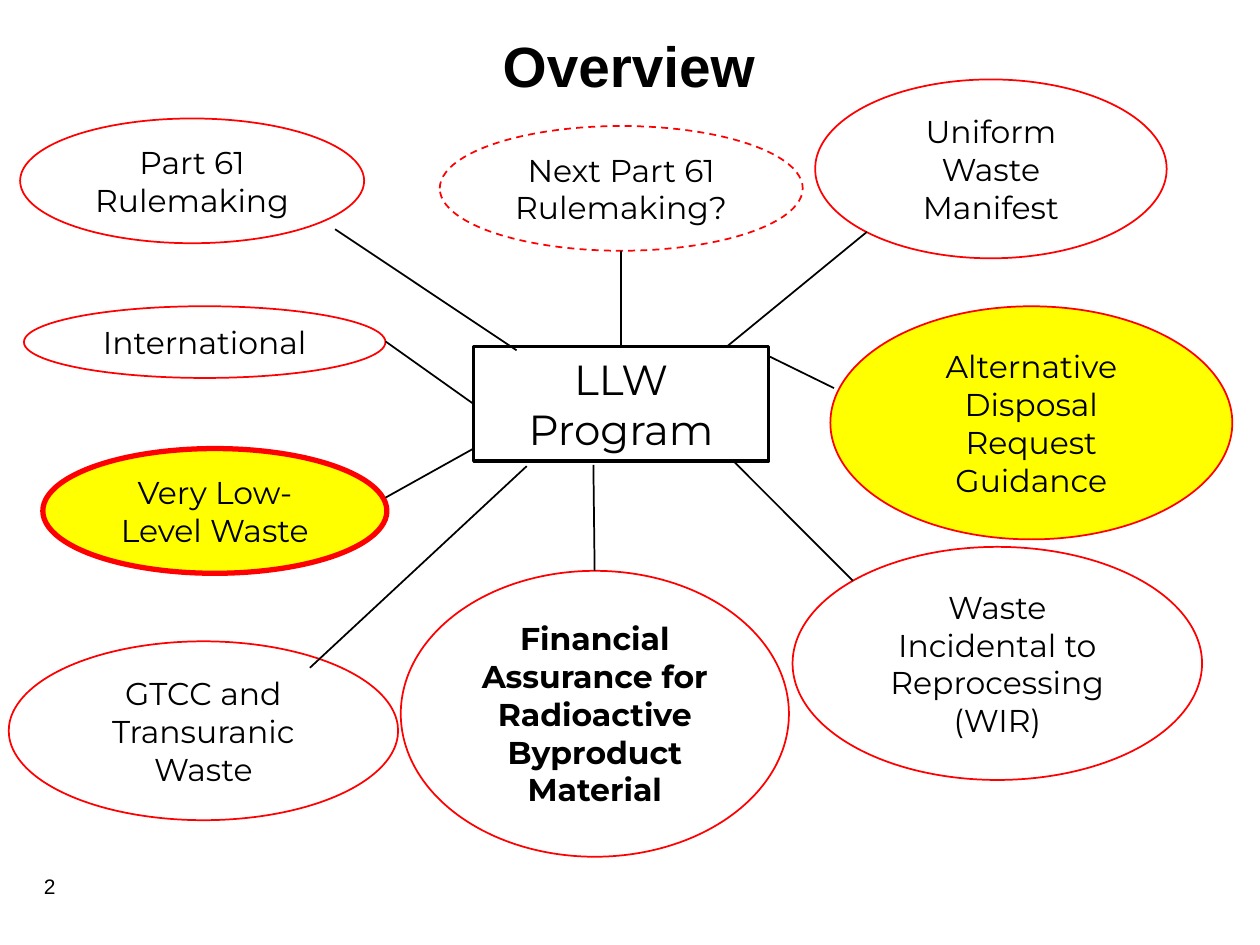
"""Build the LLW program overview slide: a central box linked to its topics."""
import pptx
import pptx.dml.color
import pptx.enum.dml
import pptx.enum.shapes
import pptx.enum.text
import pptx.oxml
import pptx.util
from lxml import etree

Pt = pptx.util.Pt
SHAPE = pptx.enum.shapes.MSO_SHAPE
ANCHOR = pptx.enum.text.MSO_ANCHOR
ALIGN = pptx.enum.text.PP_ALIGN
COLORS = {"black": "000000", "white": "FFFFFF", "red": "FF0000", "yellow": "FFFF00"}


def rgb(name):
    return pptx.dml.color.RGBColor.from_string(COLORS[name])


def write(sp, text, size=18, font="Montserrat", bold=False,
          align=ALIGN.CENTER, anchor=ANCHOR.MIDDLE):
    tf = sp.text_frame
    tf.word_wrap = True
    tf.vertical_anchor = anchor
    p = tf.paragraphs[0]
    p.alignment = align
    r = p.add_run()
    r.text = text
    r.font.size = Pt(size)
    r.font.name = font
    r.font.bold = bold
    r.font.color.rgb = rgb("black")


prs = pptx.Presentation()
prs.slide_width, prs.slide_height = Pt(720), Pt(540)
s = prs.slides.add_slide(prs.slide_layouts[6])

sp = s.shapes.add_textbox(Pt(10.8), Pt(12.2), Pt(697), Pt(80))
write(sp, "Overview", size=32.4, font="Arial", bold=True, anchor=ANCHOR.TOP)
sp.text_frame.margin_top = Pt(5.5)

sp = s.shapes.add_shape(SHAPE.RECTANGLE, Pt(270.7), Pt(198), Pt(168.5), Pt(65.5))
sp.shadow.inherit = False
sp.fill.solid()
sp.fill.fore_color.rgb = rgb("white")
sp.line.color.rgb = rgb("black")
sp.line.width = Pt(2)
write(sp, "LLW Program", size=24)

topics = [
    ("GTCC and Transuranic Waste", 5, 366.5, 222.5, 102.2, {}),
    ("Uniform Waste Manifest", 465.8, 45.4, 200.9, 102.2, {}),
    ("Part 61 Rulemaking", 11.5, 67.7, 196.6, 71.3, {}),
    ("Alternative Disposal Request Guidance", 474.5, 175, 229.7, 133.2, {"fill": "yellow"}),
    ("Next Part 61 Rulemaking?", 251.3, 72, 207.4, 71.3, {"dash": True}),
    ("Financial Assurance for Radioactive Byproduct Material", 229, 326.2, 221.8, 163.4,
     {"bold": True}),
    ("International", 13.7, 175, 206.6, 41, {}),
    ("Waste Incidental to Reprocessing (WIR)", 452.9, 312.5, 234, 133.2, {}),
    ("Very Low-Level Waste", 24.5, 256.3, 196.6, 71.3, {"fill": "yellow", "width": 3}),
]
for text, x, y, w, h, look in topics:
    sp = s.shapes.add_shape(SHAPE.OVAL, Pt(x), Pt(y), Pt(w), Pt(h))
    sp.shadow.inherit = False
    if "fill" in look:
        sp.fill.solid()
        sp.fill.fore_color.rgb = rgb(look["fill"])
    else:
        sp.fill.background()
    sp.line.color.rgb = rgb("red")
    sp.line.width = Pt(look.get("width", 1))
    if look.get("dash"):
        sp.line.dash_style = pptx.enum.dml.MSO_LINE.DASH
    write(sp, text, bold=look.get("bold", False))

links = [
    (355, 143.3, 355, 198),
    (495.4, 132.5, 415.4, 198),
    (270, 230.4, 220.3, 195.1),
    (439.9, 203.8, 476.6, 221.8),
    (191.5, 131, 295.2, 200.2),
    (339.1, 265.7, 339.8, 326.2),
    (419.8, 264.2, 487.4, 331.9),
    (301, 266.4, 177.1, 381.6),
    (220.3, 284.4, 270.7, 256.3),
]
for ends in links:
    sp = s.shapes.add_connector(pptx.enum.shapes.MSO_CONNECTOR.STRAIGHT, *map(Pt, ends))
    sp.line.color.rgb = rgb("black")
    sp.line.width = Pt(1)
    etree.SubElement(sp._element.spPr, pptx.oxml.ns.qn("a:effectLst"))

sp = s.shapes.add_textbox(Pt(18), Pt(491.8), Pt(167.8), Pt(28.8))
write(sp, "2", size=12, font="Arial", align=ALIGN.LEFT)

prs.save("out.pptx")
